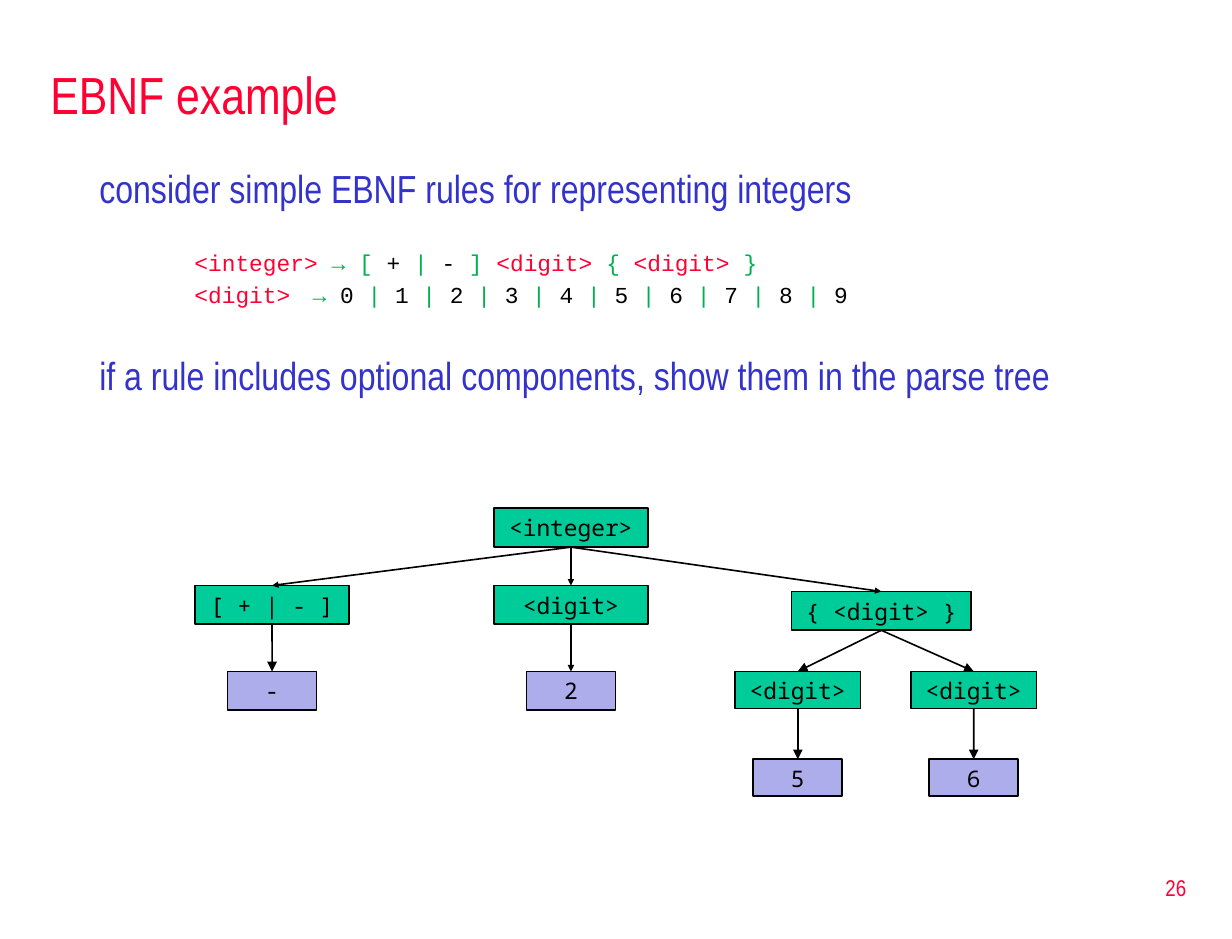
from dataclasses import dataclass
from typing import Optional

from lxml import etree
from pptx import Presentation
from pptx import util as u
from pptx.dml.color import RGBColor
from pptx.enum import shapes, text
from pptx.oxml import ns

RED = RGBColor(0xFF, 0x00, 0x33)
BLUE = RGBColor(0x33, 0x33, 0xCC)
GREEN = RGBColor(0x00, 0xB0, 0x50)
BLACK = RGBColor(0x00, 0x00, 0x00)
RULE_FILL = RGBColor(0x00, 0xCC, 0x99)
LEAF_FILL = RGBColor(0xAD, 0xAD, 0xEB)

NARROW, CODE, MONO = "Arial Narrow", "Courier New", "Noto Sans Mono"
NODE_HEIGHT, SMALL_HEIGHT = 0.84, 0.8
LEAF_WIDTH, SMALL_WIDTH, RULE_WIDTH = 1.93, 2.72, 3.33
LEVELS = (11, 12.67, 14.53, 16.43)  # tops of the tree levels, cm


@dataclass
class Label:
    words: str
    left: float
    top: float
    width: float
    height: float
    size: int
    color: RGBColor
    align: text.PP_ALIGN = text.PP_ALIGN.LEFT
    anchor: text.MSO_ANCHOR = text.MSO_ANCHOR.TOP


@dataclass
class Node:
    words: str
    center: float
    top: float
    width: float
    fill: RGBColor = RULE_FILL
    parent: Optional[int] = None
    height: float = NODE_HEIGHT
    head: str = "med"


def set_format(target, values: dict) -> None:
    for name, value in values.items():
        setattr(target, name, value)


def add_span(para, words: str, face: str, size: int, color: RGBColor) -> None:
    span = para.add_run()
    span.text = words
    set_format(span.font, {"name": face, "size": u.Pt(size)})
    span.font.color.rgb = color


def add_frame(page, left: float, top: float, width: float, height: float, anchor):
    box = page.shapes.add_textbox(u.Cm(left), u.Cm(top), u.Cm(width), u.Cm(height))
    set_format(box.text_frame, {"word_wrap": True, "vertical_anchor": anchor})
    return box.text_frame


def draw_label(page, label: Label) -> None:
    frame = add_frame(page, label.left, label.top, label.width, label.height, label.anchor)
    para = frame.paragraphs[0]
    para.alignment = label.align
    add_span(para, label.words, NARROW, label.size, label.color)


def token_color(token: str) -> RGBColor:
    if token.startswith("<"):
        return RED
    return GREEN if token.strip() in set("→[]{}|") else BLACK


def draw_grammar(page, rules: list[str]) -> None:
    frame = add_frame(page, 3.96, 5.26, 20, 1.7, text.MSO_ANCHOR.TOP)
    for index, rule in enumerate(rules):
        para = frame.add_paragraph() if index else frame.paragraphs[0]
        para.space_after = u.Pt(3)
        stops = etree.SubElement(para._p.get_or_add_pPr(), ns.qn("a:tabLst"))
        etree.SubElement(stops, ns.qn("a:tab"), pos=str(int(u.Cm(2.56))), algn="l")
        tokens = rule.split(" ")
        for position, token in enumerate(tokens, 1):
            gap = " " if position < len(tokens) else ""
            add_span(para, token + gap, CODE, 14, token_color(token))


def draw_node(page, node: Node):
    box = page.shapes.add_shape(
        shapes.MSO_SHAPE.RECTANGLE, u.Cm(node.center - node.width / 2),
        u.Cm(node.top), u.Cm(node.width), u.Cm(node.height))
    box.shadow.inherit = False
    box.fill.solid()
    box.fill.fore_color.rgb = node.fill
    box.line.color.rgb = BLACK
    box.line.width = u.Pt(1)
    set_format(box.text_frame, {"word_wrap": False, "vertical_anchor": text.MSO_ANCHOR.TOP})
    para = box.text_frame.paragraphs[0]
    para.alignment = text.PP_ALIGN.CENTER
    add_span(para, node.words, MONO, 14, BLACK)
    return box


def draw_branch(page, parent, child, head: str) -> None:
    branch = page.shapes.add_connector(shapes.MSO_CONNECTOR.STRAIGHT, 0, 0, 0, 0)
    branch.begin_connect(parent, 2)
    branch.end_connect(child, 0)
    branch.line.color.rgb = BLACK
    branch.line.width = u.Pt(1)
    properties = branch._element.spPr
    etree.SubElement(properties.get_or_add_ln(), ns.qn("a:tailEnd"),
                     type="triangle", w=head, len=head)
    etree.SubElement(properties, ns.qn("a:effectLst"))


LABELS = [
    Label("EBNF example", 0.84, 1.07, 25.2, 1.9, 32, RED, anchor=text.MSO_ANCHOR.MIDDLE),
    Label("consider simple EBNF rules for representing integers",
          1.9, 3.43, 24.18, 1.2, 24, BLUE),
    Label("if a rule includes optional components, show them in the parse tree",
          1.9, 7.47, 24.18, 1.2, 24, BLUE),
    Label("26", 20.37, 18.52, 5.56, 1.35, 14, RED,
          text.PP_ALIGN.RIGHT, text.MSO_ANCHOR.MIDDLE),
]

RULES = [
    "<integer> → [ + | - ] <digit> { <digit> }",
    "<digit> \t→ " + " | ".join(str(digit) for digit in range(10)),
]

# Parents are positions in this list
NODES = [
    Node("<integer>", 12.36, LEVELS[0], RULE_WIDTH),
    Node("[ + | - ]", 5.89, LEVELS[1], RULE_WIDTH, parent=0, head="sm"),
    Node("<digit>", 12.36, LEVELS[1], RULE_WIDTH, parent=0, head="sm"),
    Node("{ <digit> }", 19.08, 12.8, 3.89, parent=0, head="sm"),
    Node("-", 5.89, LEVELS[2], LEAF_WIDTH, LEAF_FILL, 1),
    Node("2", 12.36, LEVELS[2], LEAF_WIDTH, LEAF_FILL, 2, head="sm"),
    Node("<digit>", 17.27, LEVELS[2], SMALL_WIDTH, RULE_FILL, 3, SMALL_HEIGHT),
    Node("<digit>", 21.08, LEVELS[2], SMALL_WIDTH, RULE_FILL, 3, SMALL_HEIGHT),
    Node("5", 17.27, LEVELS[3], LEAF_WIDTH, LEAF_FILL, 6, SMALL_HEIGHT),
    Node("6", 21.08, LEVELS[3], LEAF_WIDTH, LEAF_FILL, 7, SMALL_HEIGHT),
]


def main() -> None:
    deck = Presentation()
    set_format(deck, {"slide_width": u.Cm(26.67), "slide_height": u.Cm(20.32)})
    page = deck.slides.add_slide(deck.slide_layouts[6])

    # Title, statements and page number
    for label in LABELS:
        draw_label(page, label)

    # Grammar rules
    draw_grammar(page, RULES)

    # Parse tree
    boxes = [draw_node(page, node) for node in NODES]
    for node, box in zip(NODES, boxes):
        if node.parent is not None:
            draw_branch(page, boxes[node.parent], box, node.head)

    deck.save("out.pptx")


if __name__ == "__main__":
    main()
